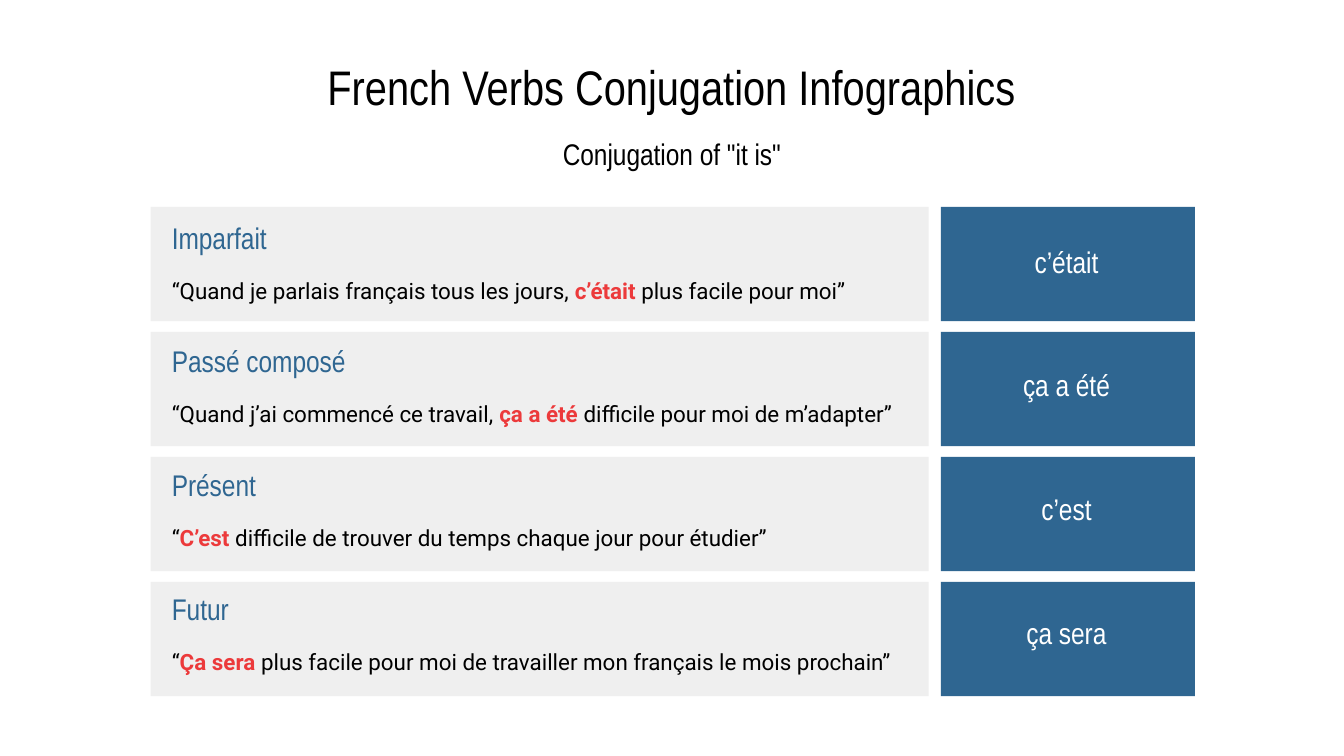
"""Build a slide on the French conjugation of "it is" in four tenses."""
from pptx import Presentation
from pptx.dml.color import RGBColor
from pptx.enum.shapes import MSO_SHAPE
from pptx.enum.text import MSO_ANCHOR, MSO_AUTO_SIZE, PP_ALIGN
from pptx.util import Inches, Pt

BLUE, GRAY, RED, BLACK, WHITE = "2F6691", "EFEFEF", "EC3A3B", "000000", "FFFFFF"
TENSES = [
    ("Imparfait", "c’était",
     ("“Quand je parlais français tous les jours, ", "c’était", " plus facile pour moi”")),
    ("Passé composé", "ça a été",
     ("“Quand j’ai commencé ce travail, ", "ça a été ", "difficile pour moi de m’adapter”")),
    ("Présent", "c’est",
     ("“", "C’est ", "difficile de trouver du temps chaque jour pour étudier”")),
    ("Futur", "ça sera",
     ("“", "Ça sera", " plus facile pour moi de travailler mon français le mois prochain”")),
]
BAND_PITCH, TEXT_PITCH = 0.93, 0.92


def rgb(value):
    return RGBColor.from_string(value)


def write(shape, runs, size, color, font="Arial Narrow", align=PP_ALIGN.LEFT,
          anchor=MSO_ANCHOR.MIDDLE):
    frame = shape.text_frame
    frame.word_wrap = True
    frame.auto_size = MSO_AUTO_SIZE.NONE
    frame.vertical_anchor = anchor
    frame.margin_left = frame.margin_right = Inches(0.1)
    frame.margin_top = frame.margin_bottom = Inches(0.1)
    paragraph = frame.paragraphs[0]
    paragraph.alignment = align
    paragraph.font.size = Pt(size)
    paragraph.font.name = font
    paragraph.font.color.rgb = rgb(color)
    for text in runs:
        paragraph.add_run().text = text
    return paragraph


prs = Presentation()
prs.slide_width, prs.slide_height = Inches(10), Inches(5.625)
slide = prs.slides.add_slide(prs.slide_layouts[5])

title = slide.shapes.title
title.left, title.top = Inches(0.5), Inches(0.45)
title.width, title.height = Inches(9), Inches(0.51)
write(title, ["French Verbs Conjugation Infographics"], 26, BLACK,
      align=PP_ALIGN.CENTER, anchor=MSO_ANCHOR.BOTTOM)

subtitle = slide.shapes.add_textbox(Inches(2.26), Inches(0.96), Inches(5.48), Inches(0.37))
write(subtitle, ['Conjugation of "it is"'], 16, BLACK, align=PP_ALIGN.CENTER)

for row, (tense, form, sentence) in enumerate(TENSES):
    band_top = Inches(1.54 + row * BAND_PITCH)
    for left, width, fill in ((7, 1.89, BLUE), (1.12, 5.79, GRAY)):
        band = slide.shapes.add_shape(MSO_SHAPE.RECTANGLE, Inches(left), band_top,
                                      Inches(width), Inches(0.85))
        band.shadow.inherit = False
        band.fill.solid()
        band.fill.fore_color.rgb = rgb(fill)
        band.line.fill.background()

    text_top = 1.58 + row * TEXT_PITCH
    entry = slide.shapes.add_group_shape().shapes
    example = entry.add_textbox(Inches(1.18), Inches(text_top + 0.38), Inches(5.59), Inches(0.37))
    verb = write(example, sentence, 12, BLACK, font="Roboto", anchor=MSO_ANCHOR.TOP).runs[1]
    verb.font.bold = True
    verb.font.color.rgb = rgb(RED)
    heading = entry.add_textbox(Inches(1.18), Inches(text_top), Inches(5.59), Inches(0.37))
    write(heading, [tense], 16, BLUE)

    answer = slide.shapes.add_textbox(Inches(7.49), Inches(text_top + 0.18),
                                      Inches(0.89), Inches(0.37))
    write(answer, [form], 16, WHITE, align=PP_ALIGN.CENTER)

prs.save("out.pptx")
